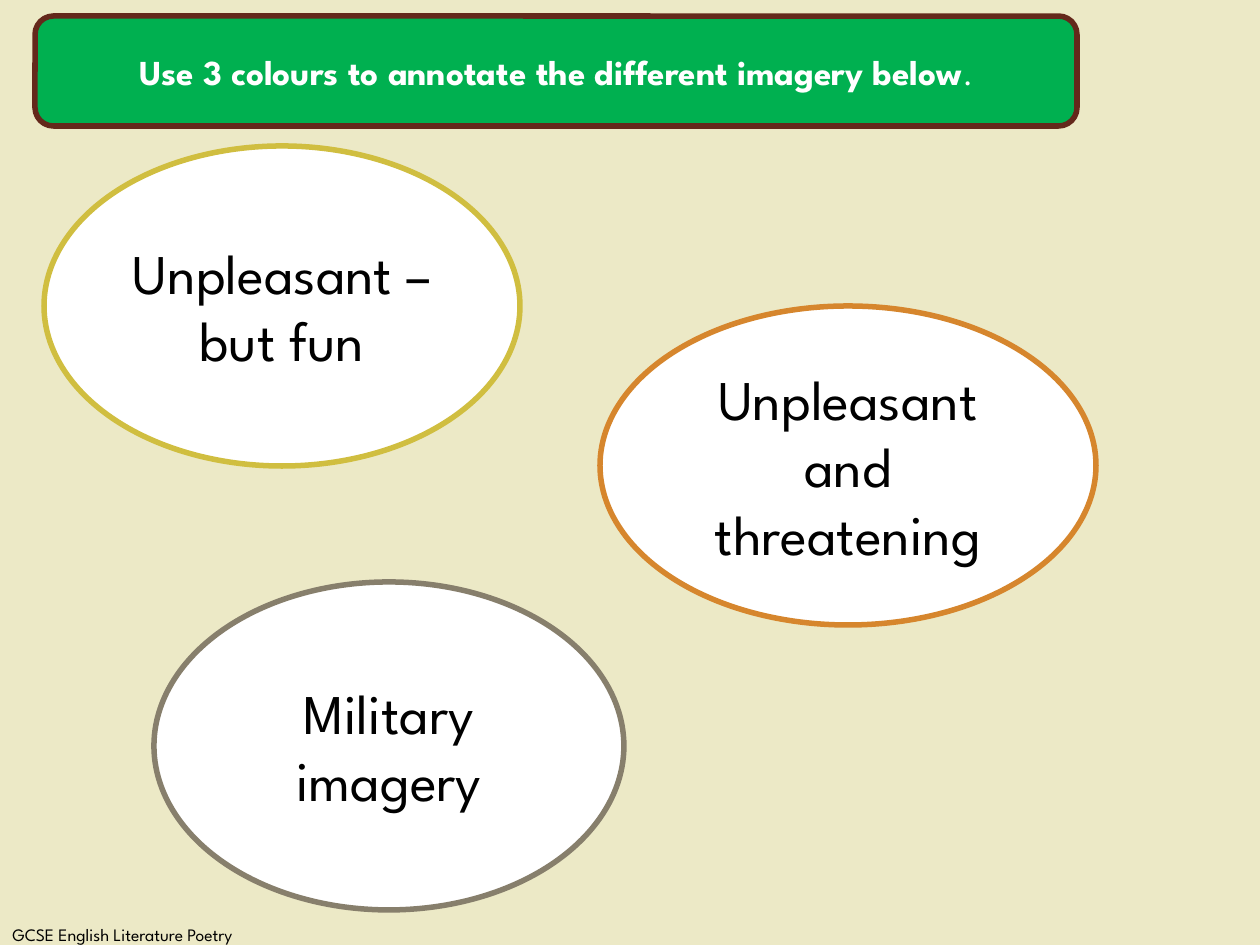
from pptx import Presentation
from pptx.dml.color import RGBColor
from pptx.enum.shapes import MSO_SHAPE as SHAPE
from pptx.enum.text import MSO_ANCHOR as ANCHOR, PP_ALIGN as ALIGN
from pptx.util import Emu, Pt

PX = 914400 // 126  # EMU per px
FONT = "League Spartan"

CREAM = RGBColor(0xEC, 0xE9, 0xC6)
WHITE = RGBColor(0xFF, 0xFF, 0xFF)
BLACK = RGBColor(0x00, 0x00, 0x00)
GREEN = RGBColor(0x00, 0xB0, 0x50)
BROWN = RGBColor(0x64, 0x28, 0x1B)
YELLOW = RGBColor(0xD0, 0xBE, 0x40)
ORANGE = RGBColor(0xD6, 0x86, 0x2D)
TAUPE = RGBColor(0x87, 0x7F, 0x6C)

# Text, outline colour, box in px (left, top, width, height)
IMAGERY = [
    ("Unpleasant – but fun", YELLOW, (44, 146, 476, 320)),
    ("Military imagery", TAUPE, (154, 582, 470, 328)),
    ("Unpleasant and threatening", ORANGE, (600, 306, 496, 319)),
]


def px(*lengths):
    return [Emu(n * PX) for n in lengths]


def add_run(p, text, size, color, bold=False):
    r = p.add_run()
    r.text = text
    r.font.name = FONT
    r.font.size = Pt(size)
    r.font.bold = bold
    r.font.color.rgb = color


def add_outlined(s, kind, box, fill, line):
    """Add a filled, outlined shape and return its centred paragraph."""
    sp = s.shapes.add_shape(kind, *px(*box))
    sp.shadow.inherit = False
    sp.fill.solid()
    sp.fill.fore_color.rgb = fill
    sp.line.color.rgb = line
    sp.line.width = Pt(3.15)
    tf = sp.text_frame
    tf.word_wrap = True
    tf.vertical_anchor = ANCHOR.MIDDLE
    p = tf.paragraphs[0]
    p.alignment = ALIGN.CENTER
    return p


def add_footer(s, text, box):
    tf = s.shapes.add_textbox(*px(*box)).text_frame
    tf.word_wrap = True
    tf.vertical_anchor = ANCHOR.BOTTOM
    tf.margin_top = tf.margin_bottom = 0
    add_run(tf.paragraphs[0], text, 10, BLACK)


def main():
    prs = Presentation()
    prs.slide_width, prs.slide_height = px(1260, 945)
    s = prs.slides.add_slide(prs.slide_layouts[6])
    s.background.fill.solid()
    s.background.fill.fore_color.rgb = CREAM

    # Course name at the foot
    add_footer(s, "GCSE English Literature Poetry", (0, 914, 343, 31))

    # Kinds of imagery
    for text, line, box in IMAGERY:
        p = add_outlined(s, SHAPE.OVAL, box, WHITE, line)
        add_run(p, text, 32, BLACK)

    # Instruction banner
    p = add_outlined(s, SHAPE.ROUNDED_RECTANGLE, (35, 16, 1042, 110), GREEN, BROWN)
    add_run(p, "Use 3 colours to annotate the different imagery below", 20, WHITE, bold=True)
    add_run(p, ".", 18, WHITE)

    prs.save("out.pptx")


if __name__ == "__main__":
    main()
